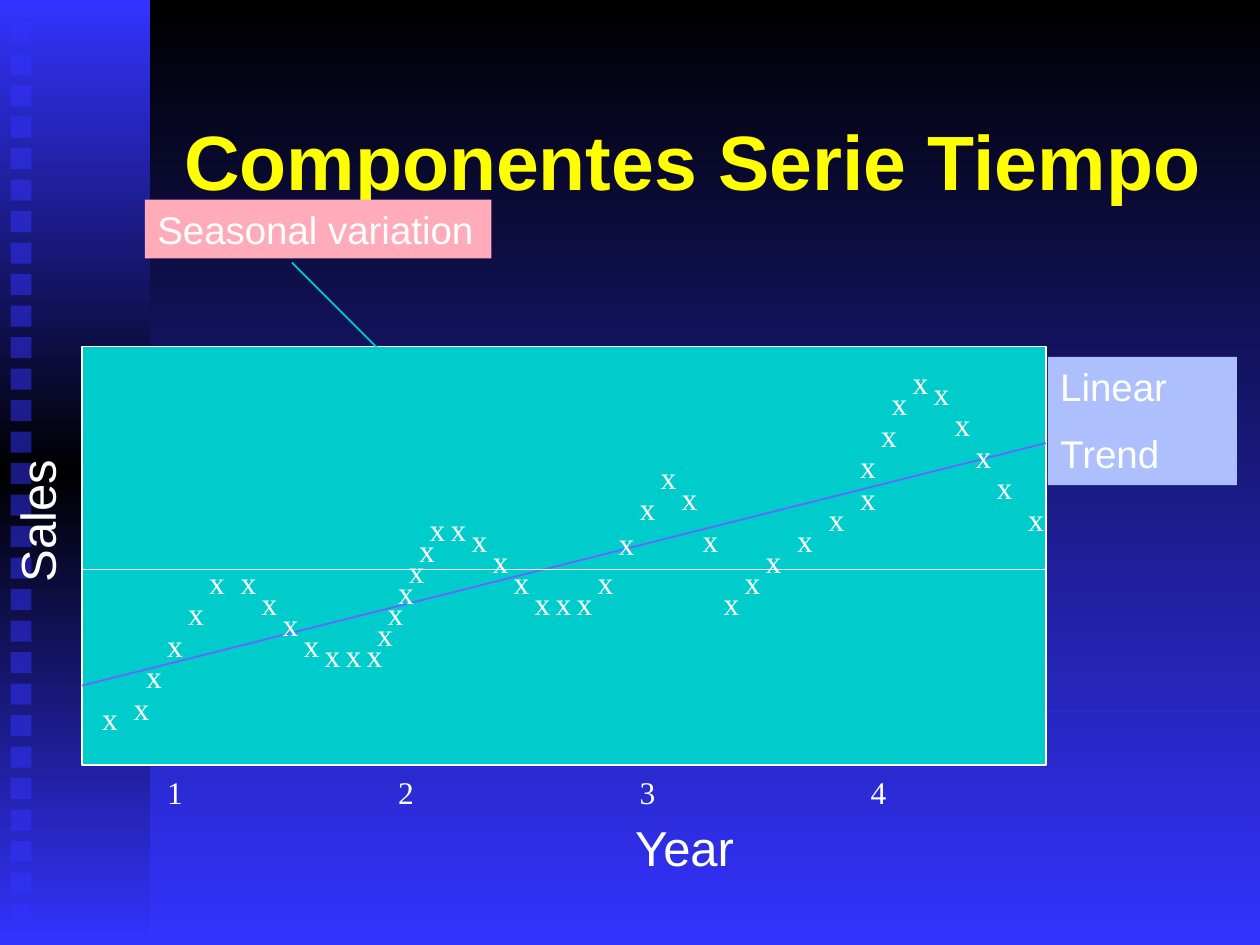
from dataclasses import dataclass
from typing import NamedTuple, Optional

import lxml.etree
import pptx
import pptx.dml.color
import pptx.enum.shapes
import pptx.enum.text
import pptx.oxml.ns
import pptx.util

COLUMNS, ROWS = 120, 90
SLIDE_WIDTH, SLIDE_HEIGHT = pptx.util.Inches(10), pptx.util.Inches(7.5)


@dataclass(frozen=True)
class Theme:
    black: str = "000000"
    blue: str = "3333FF"
    yellow: str = "FFFF00"
    white: str = "FFFFFF"
    teal: str = "00CCCC"
    violet: str = "6666FF"
    pink: str = "FFABB9"
    pale_blue: str = "ADC0FD"
    sans: str = "Arial"
    serif: str = "Times New Roman"
    title: int = 44
    axis: int = 28
    callout: int = 22
    mark: int = 18
    paragraph_gap: int = 12
    line: int = 1


THEME = Theme()


class Frame(NamedTuple):
    column: float
    row: float
    width: float
    height: float


class Point(NamedTuple):
    column: float
    row: float


class Type(NamedTuple):
    size: int
    font: str = THEME.sans
    color: str = THEME.white
    bold: bool = False


class Callout(NamedTuple):
    frame: Frame
    color: str
    words: tuple


class AxisTitle(NamedTuple):
    frame: Frame
    word: str
    rotation: int


class Line(NamedTuple):
    start: Point
    end: Point
    color: str
    arrow: bool = False


MARK_TYPE = Type(THEME.mark, THEME.serif)
MARK_INSET = 0.75
PLOT = Frame(7.8, 33, 91.8, 39.85)
PLOT_RIGHT = PLOT.column + PLOT.width
HUB = Point(41.7, 39.4)

SALES_MARKS = [Point(*place) for place in (
    (7.8, 66), (10.8, 65), (12, 62), (14, 59), (16, 56), (18, 53), (21, 53),
    (23, 55), (25, 57), (27, 59), (29, 60), (31, 60), (33, 60), (34, 58),
    (35, 56), (36, 54), (37, 52), (38, 50), (39, 48), (41, 48), (43, 49),
    (45, 51), (47, 53), (49, 55), (51, 55), (53, 55), (55, 53), (57, 49.3),
    (59, 46), (61, 43), (63, 45), (65, 49), (67, 55), (69, 53), (71, 51),
    (74, 49), (77, 47), (80, 45), (80, 42), (82, 39), (83, 36), (85, 34),
    (87, 35), (89, 38), (91, 41), (93, 44), (96, 47),
)]
YEAR_COLUMNS = {"1": 14, "2": 36, "3": 59, "4": 81}

LEVEL_LINES = [
    Line(Point(PLOT.column, 65.3), Point(PLOT_RIGHT, 42.2), THEME.violet),
    Line(Point(PLOT.column, 54.25), Point(PLOT_RIGHT, 54.25), THEME.white),
]
SEASON_LINES = [
    Line(HUB, Point(41.7, 48.2), THEME.teal, True),
    Line(HUB, Point(62.6, 44.2), THEME.teal, True),
    Line(HUB, Point(84.6, 35.3), THEME.teal, True),
    Line(HUB, Point(22.7, 53.2), THEME.teal, True),
    Line(Point(41.9, 39.1), Point(27.8, 25), THEME.teal),
]
AXIS_TITLES = [
    AxisTitle(Frame(57.2, 77.3, 16, 6.7), "Year", 0),
    AxisTitle(Frame(-4.6, 46.3, 16, 6.7), "Sales", 270),
]
CALLOUTS = [
    Callout(Frame(13.8, 19, 33, 5.6), THEME.pink, ("Seasonal variation",)),
    Callout(Frame(99.8, 34, 18, 12.2), THEME.pale_blue, ("Linear", "Trend")),
]


def x(columns: float) -> int:
    return round(SLIDE_WIDTH * columns / COLUMNS)


def y(rows: float) -> int:
    return round(SLIDE_HEIGHT * rows / ROWS)


def place(frame: Frame) -> tuple:
    return x(frame.column), y(frame.row), x(frame.width), y(frame.height)


def rgb(color: str) -> pptx.dml.color.RGBColor:
    return pptx.dml.color.RGBColor.from_string(color)


def add_node(parent, tag: str, **attributes: str):
    return lxml.etree.SubElement(parent, pptx.oxml.ns.qn(tag), attributes)


def fill_downward(fill, element, colors: tuple) -> None:
    fill.gradient()
    fill.gradient_angle = 270
    stops = next(element.iter(pptx.oxml.ns.qn("a:gsLst")))
    for stop in list(stops):
        stops.remove(stop)
    for index, color in enumerate(colors):
        stop = add_node(stops, "a:gs", pos=str(100000 * index // (len(colors) - 1)))
        add_node(stop, "a:srgbClr", val=color)


def add_block(slide, frame: Frame, color: str, outline: Optional[str] = None):
    block = slide.shapes.add_shape(pptx.enum.shapes.MSO_SHAPE.RECTANGLE, *place(frame))
    block.shadow.inherit = False
    block.fill.solid()
    block.fill.fore_color.rgb = rgb(color)
    if outline:
        block.line.color.rgb = rgb(outline)
        block.line.width = pptx.util.Pt(THEME.line)
    else:
        block.line.fill.background()
    return block


def write(text_frame, words: tuple, style: Type, align=pptx.enum.text.PP_ALIGN.LEFT,
          anchor=pptx.enum.text.MSO_ANCHOR.TOP, wrap: bool = True) -> None:
    text_frame.word_wrap = wrap
    text_frame.vertical_anchor = anchor
    for index, word in enumerate(words):
        paragraph = text_frame.add_paragraph() if index else text_frame.paragraphs[0]
        paragraph.alignment = align
        if index:
            paragraph.space_before = pptx.util.Pt(THEME.paragraph_gap)
        run = paragraph.add_run()
        run.text = word
        run.font.size = pptx.util.Pt(style.size)
        run.font.name = style.font
        run.font.bold = style.bold
        run.font.color.rgb = rgb(style.color)


def add_label(slide, frame: Frame, word: str, style: Type, **layout):
    label = slide.shapes.add_textbox(*place(frame))
    write(label.text_frame, (word,), style, **layout)
    return label


def add_line(slide, line: Line) -> None:
    connector = slide.shapes.add_connector(
        pptx.enum.shapes.MSO_CONNECTOR.STRAIGHT,
        x(line.start.column), y(line.start.row), x(line.end.column), y(line.end.row))
    connector.line.color.rgb = rgb(line.color)
    connector.line.width = pptx.util.Pt(THEME.line)
    if line.arrow:
        add_node(connector.line._get_or_add_ln(), "a:tailEnd", type="stealth")
    add_node(connector._element.spPr, "a:effectLst")


def add_backdrop(slide) -> None:
    fill_downward(slide.background.fill, slide._element, (THEME.black, THEME.blue))
    band = add_block(slide, Frame(0, 0, 14.28, ROWS), THEME.blue)
    fill_downward(band.fill, band._element, (THEME.blue, THEME.black, THEME.blue))
    for index in range(29):
        square = add_block(slide, Frame(1, 2.1 + 3 * index, 2, 2), THEME.blue)
        tint = next(square._element.spPr.iter(pptx.oxml.ns.qn("a:srgbClr")))
        add_node(tint, "a:alpha", val="50000")


def main() -> None:
    deck = pptx.Presentation()
    deck.slide_width, deck.slide_height = SLIDE_WIDTH, SLIDE_HEIGHT
    slide = deck.slides.add_slide(deck.slide_layouts[6])
    add_backdrop(slide)
    centered = pptx.enum.text.PP_ALIGN.CENTER
    add_label(slide, Frame(15, 8, 102, 12.2), "Componentes Serie Tiempo",
              Type(THEME.title, color=THEME.yellow, bold=True),
              align=centered, anchor=pptx.enum.text.MSO_ANCHOR.BOTTOM)
    add_block(slide, PLOT, THEME.teal, THEME.white)
    for year, column in YEAR_COLUMNS.items():
        add_label(slide, Frame(column + MARK_INSET, 73, 3.8, 4.8), year, MARK_TYPE, wrap=False)
    for line in LEVEL_LINES:
        add_line(slide, line)
    for mark in SALES_MARKS:
        add_label(slide, Frame(mark.column + MARK_INSET, mark.row, 3.8, 4.8), "x", MARK_TYPE)
    for line in SEASON_LINES:
        add_line(slide, line)
    for title in AXIS_TITLES:
        label = add_label(slide, title.frame, title.word, Type(THEME.axis), align=centered)
        label.rotation = title.rotation
    for callout in CALLOUTS:
        block = add_block(slide, callout.frame, callout.color)
        write(block.text_frame, callout.words, Type(THEME.callout))
    deck.save("out.pptx")


if __name__ == "__main__":
    main()
